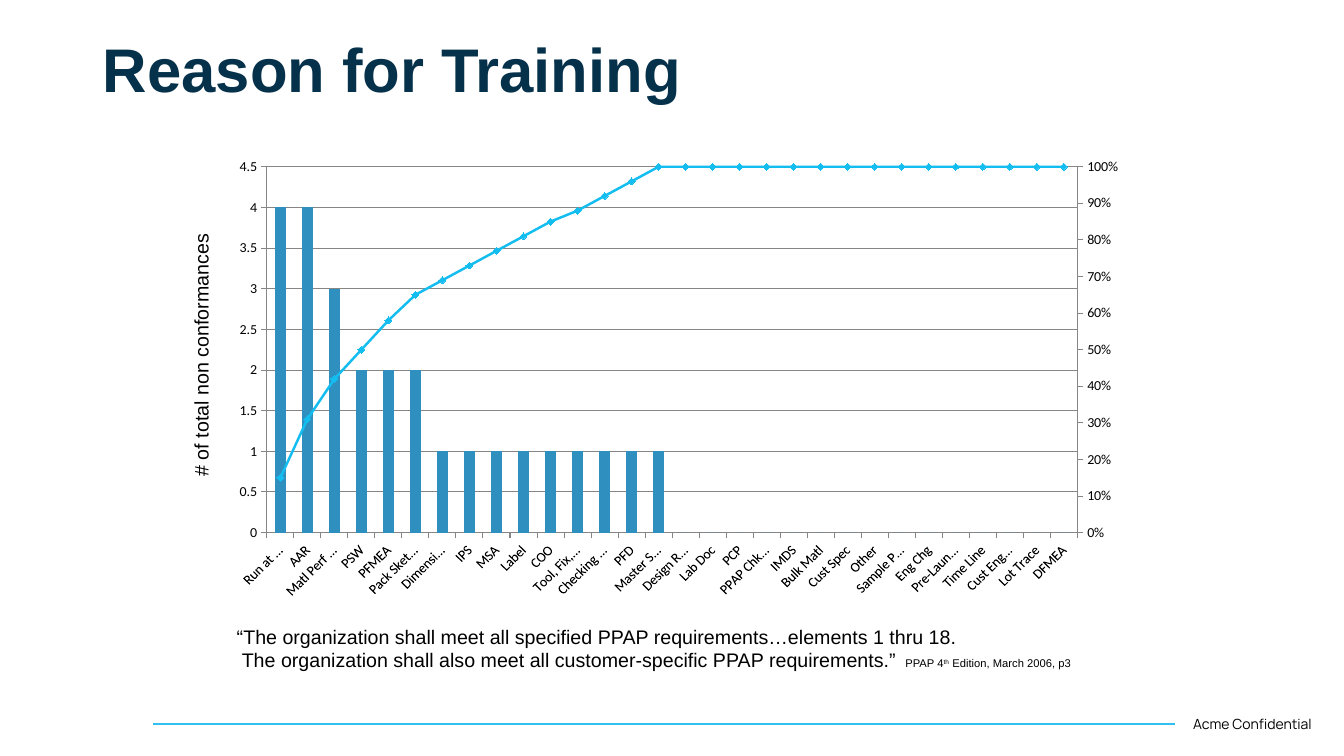
from lxml import etree
from pptx import Presentation
from pptx.chart.data import CategoryChartData
from pptx.dml.color import RGBColor
from pptx.enum.chart import XL_CHART_TYPE, XL_MARKER_STYLE, XL_TICK_MARK
from pptx.enum.shapes import MSO_CONNECTOR
from pptx.enum.text import MSO_ANCHOR
from pptx.oxml import parse_xml
from pptx.oxml.ns import nsdecls, qn
from pptx.util import Inches, Pt

COLUMN = XL_CHART_TYPE.COLUMN_CLUSTERED
DIAMOND = XL_MARKER_STYLE.DIAMOND
OUTSIDE = XL_TICK_MARK.OUTSIDE
STRAIGHT = MSO_CONNECTOR.STRAIGHT
MIDDLE = MSO_ANCHOR.MIDDLE

NAVY = RGBColor(0x05, 0x31, 0x4A)
BLACK = RGBColor(0, 0, 0)
GREY = RGBColor(0x86, 0x86, 0x86)
BAR_BLUE = RGBColor(0x2F, 0x90, 0xC0)
LINE_BLUE = RGBColor(0x14, 0xBD, 0xF0)
RULE_BLUE = RGBColor(0x30, 0xBF, 0xEF)

REASONS = [
    "Run at Rate", "AAR", "Matl Perf Results", "PSW", "PFMEA",
    "Pack Sketch Form", "Dimensional", "IPS", "MSA", "Label", "COO",
    "Tool, Fix, gage", "Checking Aids", "PFD", "Master Sample",
    "Design Record", "Lab Doc", "PCP", "PPAP Chk Lst", "IMDS", "Bulk Matl",
    "Cust Spec", "Other", "Sample Product", "Eng Chg", "Pre-Launch CP",
    "Time Line", "Cust Eng App", "Lot Trace", "DFMEA",
]
COUNTS = [4, 4, 3, 2, 2, 2] + [1] * 9 + [0] * 15
SHARES = [0.15, 0.31, 0.42, 0.5, 0.58, 0.65, 0.69, 0.73, 0.77, 0.81,
          0.85, 0.88, 0.92, 0.96] + [1] * 16
PLOT_SHARE = {"x": 0.046, "y": 0.022, "w": 0.909, "h": 0.843}

LINE_PLOT = """<c:lineChart %s><c:grouping val="standard"/>
<c:varyColors val="0"/><c:marker val="1"/>
<c:axId val="5001"/><c:axId val="5002"/></c:lineChart>"""
HIDDEN_AXIS = """<c:catAx %s><c:axId val="5001"/>
<c:scaling><c:orientation val="minMax"/></c:scaling><c:delete val="1"/>
<c:axPos val="b"/><c:crossAx val="5002"/><c:crosses val="autoZero"/></c:catAx>"""
RIGHT_AXIS = """<c:valAx %s><c:axId val="5002"/>
<c:scaling><c:orientation val="minMax"/><c:max val="1"/><c:min val="0"/></c:scaling>
<c:delete val="0"/><c:axPos val="r"/><c:numFmt formatCode="0%%" sourceLinked="0"/>
<c:majorTickMark val="out"/><c:minorTickMark val="none"/><c:tickLblPos val="nextTo"/>
<c:spPr><a:ln w="9525"><a:solidFill><a:srgbClr val="868686"/></a:solidFill></a:ln></c:spPr>
<c:crossAx val="5001"/><c:crosses val="max"/><c:majorUnit val="0.1"/></c:valAx>"""
LAYOUT = """<c:layout %s><c:manualLayout><c:layoutTarget val="inner"/>
<c:xMode val="edge"/><c:yMode val="edge"/></c:manualLayout></c:layout>"""


def add_run(p, text, size=14, font="Arial", color=BLACK, bold=False, raised=False):
    """Add one formatted run to a paragraph."""
    r = p.add_run()
    r.text = text
    r.font.size, r.font.name, r.font.bold = Pt(size), font, bold
    r.font.color.rgb = color
    if raised:
        r.font._element.set("baseline", "30000")


def add_box(slide, box):
    """Add a wrapping text box and return it."""
    sp = slide.shapes.add_textbox(*map(Inches, box))
    sp.text_frame.word_wrap = True
    return sp


def add_title(slide, box, text):
    """Place and format the title placeholder."""
    sp = slide.shapes.title
    sp.left, sp.top, sp.width, sp.height = map(Inches, box)
    tf = sp.text_frame
    tf.vertical_anchor = MIDDLE
    p = tf.paragraphs[0]
    p.line_spacing = 0.9
    p._p.get_or_add_pPr().set("algn", "l")
    add_run(p, text, size=44, color=NAVY, bold=True)


def add_footer(slide, box, text):
    """Draw the footer rule and the label to its right."""
    x, y, w, h = box
    rule_w = w * 0.867
    cn = slide.shapes.add_connector(STRAIGHT, Inches(x), Inches(y + h / 2),
                                    Inches(x + rule_w), Inches(y + h / 2))
    cn.line.color.rgb, cn.line.width = RULE_BLUE, Pt(1.5)
    etree.SubElement(cn._element.spPr, qn("a:effectLst"))
    sp = add_box(slide, (x + rule_w + 0.08, y, w - rule_w - 0.08, h))
    add_run(sp.text_frame.paragraphs[0], text, size=10, font="Manrope")


def add_quote(slide, box):
    """Write the two-line quotation with its source."""
    tf = add_box(slide, box).text_frame
    add_run(tf.paragraphs[0],
            "“The organization shall meet all specified PPAP requirements…elements 1 thru 18.")
    p = tf.add_paragraph()
    p._p.get_or_add_pPr().set("marL", str(Inches(0.05)))
    add_run(p, "The organization shall also meet all customer-specific PPAP requirements.” ")
    add_run(p, " PPAP 4", size=8)
    add_run(p, "th", size=8, raised=True)
    add_run(p, " Edition, March 2006, p3", size=8)


def add_axis_label(slide, box, text):
    """Write the label that reads upwards beside the chart."""
    sp = add_box(slide, box)
    sp.rotation = 270
    add_run(sp.text_frame.paragraphs[0], text)


def move_to_right_axis(chart):
    """Turn the second column series into a line on a right-hand axis."""
    area = chart._chartSpace.chart.plotArea
    bars = area.find(qn("c:barChart"))
    ser = bars.findall(qn("c:ser"))[1]
    for flag in ser.findall(qn("c:invertIfNegative")):
        ser.remove(flag)
    line = parse_xml(LINE_PLOT % nsdecls("c"))
    line.insert(2, ser)
    bars.addnext(line)
    left = area.find(qn("c:valAx"))
    left.addnext(parse_xml(RIGHT_AXIS % nsdecls("c", "a")))
    left.addnext(parse_xml(HIDDEN_AXIS % nsdecls("c")))


def set_plot_share(chart):
    """Fix the inner plot area as shares of the chart."""
    area = chart._chartSpace.chart.plotArea
    for old in area.findall(qn("c:layout")):
        area.remove(old)
    layout = parse_xml(LAYOUT % nsdecls("c"))
    for name, share in PLOT_SHARE.items():
        etree.SubElement(layout[0], qn("c:" + name)).set("val", str(share))
    area.insert(0, layout)


def add_pareto(slide, box):
    """Draw the counts as columns and their running share as a line."""
    data = CategoryChartData()
    data.categories = REASONS
    data.add_series("Series 1", COUNTS)
    data.add_series("Series 2", SHARES)
    chart = slide.shapes.add_chart(COLUMN, *map(Inches, box), data).chart
    chart.has_legend = chart.has_title = False
    chart.font.size, chart.font.name = Pt(10), "Calibri"
    chart.font.color.rgb = BLACK
    cat, val = chart.category_axis, chart.value_axis
    for axis in (cat, val):
        axis.major_tick_mark = OUTSIDE
        axis.format.line.color.rgb = GREY
    val.minimum_scale, val.maximum_scale, val.major_unit = 0, 4.5, 0.5
    val.major_gridlines.format.line.color.rgb = GREY
    cat.tick_labels.font.size = Pt(10)
    cat._element.find(qn("c:txPr"))[0].set("rot", "-2700000")
    move_to_right_axis(chart)
    set_plot_share(chart)

    columns, line = chart.plots
    columns.gap_width, columns.vary_by_categories = 150, False
    fill = columns.series[0].format.fill
    fill.solid()
    fill.fore_color.rgb = BAR_BLUE
    s = line.series[0]
    s.smooth = False
    s.format.line.color.rgb, s.format.line.width = LINE_BLUE, Pt(1.75)
    s.marker.style, s.marker.size = DIAMOND, 5
    s.marker.format.fill.solid()
    s.marker.format.fill.fore_color.rgb = LINE_BLUE
    s.marker.format.line.color.rgb = LINE_BLUE


def main():
    """Build the slide and save it."""
    prs = Presentation()
    prs.slide_width, prs.slide_height = Inches(13.33), Inches(7.5)
    slide = prs.slides.add_slide(prs.slide_layouts[5])
    add_footer(slide, (1.52, 7.05, 11.69, 0.27), "Acme Confidential")
    add_title(slide, (0.92, 0.28, 11.5, 0.88), "Reason for Training")
    add_quote(slide, (2.25, 6.15, 8.57, 0.57))
    add_axis_label(slide, (0.62, 3.28, 2.75, 0.34), "# of total non conformances")
    add_pareto(slide, (2.24, 1.56, 8.85, 4.38))
    prs.save("out.pptx")


if __name__ == "__main__":
    main()
